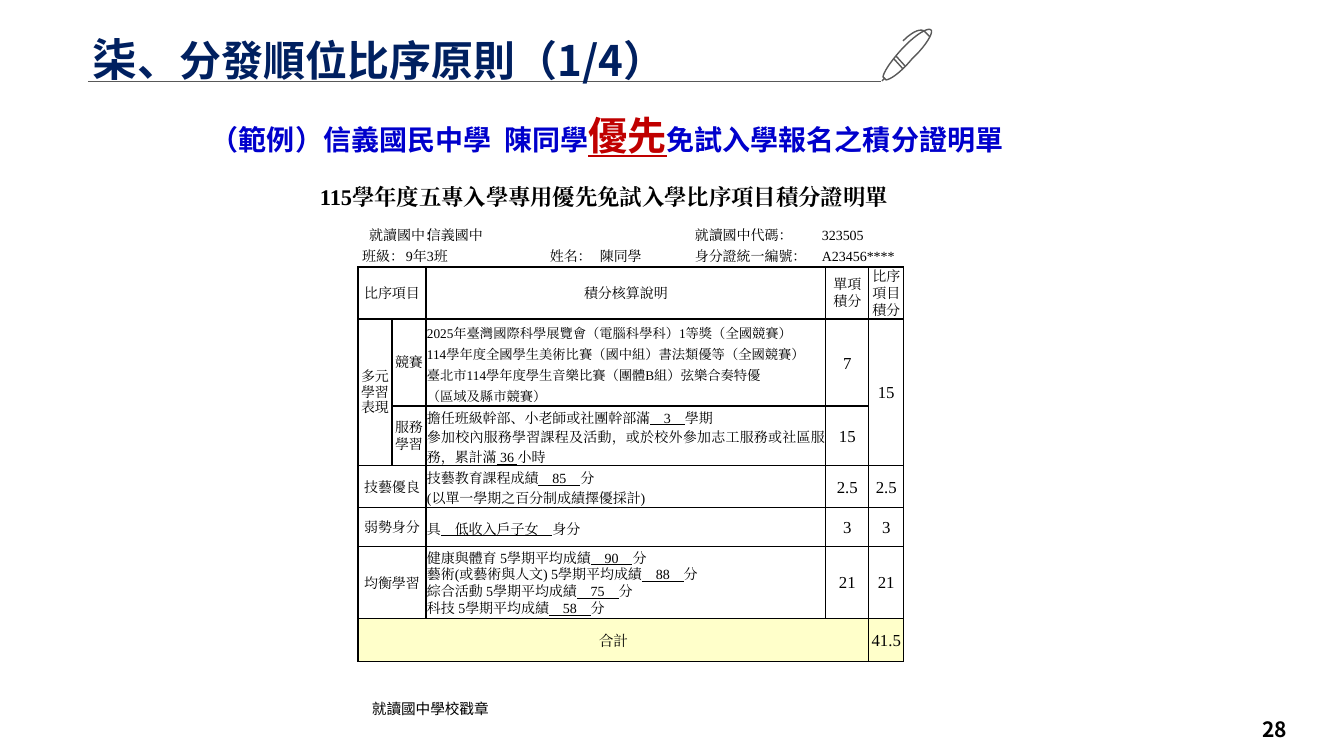
"""Build the slide on ranking rules with a sample score sheet."""
import pptx
import pptx.util
import pptx.dml.color
import pptx.enum.shapes
import pptx.enum.text
import pptx.oxml.ns
from lxml import etree

THEME = {
    "sans": "Noto Sans CJK SC", "serif": "Times New Roman",
    "navy": "002060", "blue": "0000CC", "red": "C00000",
    "black": "000000", "grey": "595959", "cream": "FFFFCA",
    "first": 32, "title": 30, "stress": 28, "lead": 20, "head": 16,
    "page": 15, "score": 12, "note": 10.5, "body": 10, "prize": 9.5,
}

BOXES = [
    {"at": (201, 106, 822, 57), "font": "sans", "size": "lead", "color": "blue", "bold": True,
     "runs": [("（範例）信義國民中學  陳同學", {}),
              ("優先", {"size": "stress", "color": "red", "under": True}),
              ("免試入學報名之積分證明單", {})]},
    {"at": (310, 178, 596, 37), "font": "serif", "size": "head", "color": "black", "bold": True,
     "wrap": False, "runs": [("115學年度五專入學專用優先免試入學比序項目積分證明單", {})]},
    {"at": (362, 695, 139, 28), "font": "sans", "size": "note", "color": "black",
     "wrap": False, "runs": [("就讀國中學校戳章", {})]},
    {"at": (83, 33, 795, 48), "font": "sans", "size": "title", "color": "navy", "bold": True,
     "space": 0.9, "runs": [("柒", {"size": "first"}), ("、分發順位比序原則（1/4）", {})]},
    {"at": (1056, 715, 241, 29), "font": "sans", "size": "page", "color": "black", "bold": True,
     "align": "r", "middle": True, "runs": [("28", {})]},
]

SPOT = (358, 226)
COLS = [34, 13, 21, 114, 59, 95, 127, 5, 43, 35]
ROWS = [19, 22, 52, 87, 60, 42, 39, 72, 43]

# row, column, row span, column span, align, size, leading, lines
CELLS = [
    (0, 0, 1, 3, "r", "body", 12, ["就讀國中："]),
    (0, 3, 1, 3, "l", "body", 12, ["信義國中"]),
    (0, 6, 1, 1, "j", "body", 12, ["就讀國中代碼："]),
    (0, 7, 1, 3, "l", "body", 12, ["323505"]),
    (1, 0, 1, 2, "r", "body", 12, ["班級："]),
    (1, 2, 1, 2, "l", "body", 12, ["9年3班"]),
    (1, 4, 1, 1, "j", "body", 12, ["姓名： "]),
    (1, 5, 1, 1, "j", "body", 12, ["陳同學"]),
    (1, 6, 1, 1, "j", "body", 12, ["身分證統一編號："]),
    (1, 7, 1, 3, "l", "body", 12, ["A23456****"]),
    (2, 0, 1, 3, "c", "body", 12, ["比序項目"]),
    (2, 3, 1, 5, "c", "body", 12, ["積分核算說明"]),
    (2, 8, 1, 1, "c", "body", 12, ["單項", "積分"]),
    (2, 9, 1, 1, "c", "body", 12, ["比序項目積分"]),
    (3, 0, 2, 1, "c", "body", None, ["多元學習表現"]),
    (3, 1, 1, 2, "c", "body", 12, ["競賽"]),
    (3, 3, 1, 5, "j", "prize", 15, [
        "2025年臺灣國際科學展覽會（電腦科學科）1等獎（全國競賽）",
        "114學年度全國學生美術比賽（國中組）書法類優等（全國競賽）",
        "臺北市114學年度學生音樂比賽（團體B組）弦樂合奏特優",
        "（區域及縣市競賽）"]),
    (3, 8, 1, 1, "c", "score", 15, ["7"]),
    (3, 9, 2, 1, "c", "score", 14, ["15"]),
    (4, 1, 1, 2, "c", "body", 12, ["服務", "學習"]),
    (4, 3, 1, 5, "j", "body", 14, [
        "擔任班級幹部、小老師或社團幹部滿|　3　|學期",
        "參加校內服務學習課程及活動，或於校外參加志工服務或社區服務，累計滿| 36 |小時"]),
    (4, 8, 1, 1, "c", "score", 14, ["15"]),
    (5, 0, 1, 3, "c", "body", 12, ["技藝優良"]),
    (5, 3, 1, 5, "j", "body", 14, ["技藝教育課程成績|　85　|分", "(以單一學期之百分制成績擇優採計)"]),
    (5, 8, 1, 1, "c", "score", 14, ["2.5"]),
    (5, 9, 1, 1, "c", "score", 14, ["2.5"]),
    (6, 0, 1, 3, "c", "body", 12, ["弱勢身分"]),
    (6, 3, 1, 5, "j", "body", 14, ["具|　低收入戶子女　|身分"]),
    (6, 8, 1, 1, "c", "score", 14, ["3"]),
    (6, 9, 1, 1, "c", "score", 14, ["3"]),
    (7, 0, 1, 3, "c", "body", 12, ["均衡學習"]),
    (7, 3, 1, 5, "l", "body", 12, [
        "健康與體育 5學期平均成績|　90　|分",
        "藝術(或藝術與人文) 5學期平均成績|　88　|分",
        "綜合活動 5學期平均成績|　75　|分",
        "科技 5學期平均成績|　58　|分"]),
    (7, 8, 1, 1, "c", "score", 14, ["21"]),
    (7, 9, 1, 1, "c", "score", 14, ["21"]),
    (8, 0, 1, 9, "c", "note", 14, ["合計"]),
    (8, 9, 1, 1, "c", "score", 14, ["41.5"]),
]

RULE = (88, 81, 881, 81)
PEN = [
    ((903, 69), [[(894, 59)]], False),
    ((896, 56), [[(905, 66)]], False),
    ((931, 30), [[(928, 27), (915, 35), (902, 49)], [(892, 60), (884, 71), (883, 77)],
                 [(886, 80)], [(892, 79), (902, 71), (912, 59)],
                 [(926, 46), (934, 32), (931, 30)]], True),
    ((885, 78), [[(882, 81)]], False),
    ((930, 37), [[(924, 31)], [(924, 31), (918, 26), (903, 41)]], False),
]

ALIGN = {"l": pptx.enum.text.PP_ALIGN.LEFT, "r": pptx.enum.text.PP_ALIGN.RIGHT,
         "c": pptx.enum.text.PP_ALIGN.CENTER, "j": pptx.enum.text.PP_ALIGN.JUSTIFY}
STEPS = 10
qn = pptx.oxml.ns.qn


def px(n):
    return round(n * 914400 / 100.8)


def rgb(name):
    return pptx.dml.color.RGBColor.from_string(THEME[name])


def style(font, size=None, color=None, under=None):
    if size:
        font.size = pptx.util.Pt(THEME[size])
    if color:
        font.color.rgb = rgb(color)
    if under:
        font.underline = True


def write(para, runs, font, size, color, bold=False, align="l", space=None):
    para.alignment = ALIGN[align]
    para.line_spacing = space
    style(para.font, size, color)
    para.font.bold = bold
    para.font.name = THEME[font]
    base = para._p.find(".//" + qn("a:defRPr"))
    etree.SubElement(base, qn("a:ea")).set("typeface", THEME[font])
    for text, extra in runs:
        run = para.add_run()
        run.text = text
        style(run.font, **extra)


def add_box(slide, at, runs, wrap=True, middle=False, **look):
    frame = slide.shapes.add_textbox(*map(px, at)).text_frame
    frame.word_wrap = wrap
    if middle:
        frame.vertical_anchor = pptx.enum.text.MSO_ANCHOR.MIDDLE
    write(frame.paragraphs[0], runs, **look)


def edge(cell, sides):
    props = cell._tc.get_or_add_tcPr()
    for side in "LRTB":
        line = etree.SubElement(props, qn("a:ln" + side), w="12700")
        if side in sides:
            fill = etree.SubElement(line, qn("a:solidFill"))
            etree.SubElement(fill, qn("a:srgbClr"), val=THEME["black"])
        else:
            etree.SubElement(line, qn("a:noFill"))


def add_sheet(slide):
    table = slide.shapes.add_table(len(ROWS), len(COLS), *map(px, (*SPOT, sum(COLS), sum(ROWS)))).table
    table.first_row = table.horz_banding = False
    for col, wide in zip(table.columns, COLS):
        col.width = px(wide)
    for r, (row, high) in enumerate(zip(table.rows, ROWS)):
        row.height = px(high)
        for cell in row.cells:
            edge(cell, {0: "", 1: "B"}.get(r, "LRTB"))
            cell.margin_left = cell.margin_right = px(1)
            cell.margin_top = cell.margin_bottom = 0
            cell.vertical_anchor = pptx.enum.text.MSO_ANCHOR.MIDDLE
            if r == len(ROWS) - 1:
                cell.fill.solid()
                cell.fill.fore_color.rgb = rgb("cream")
            else:
                cell.fill.background()
    for r, c, down, over, align, size, lead, lines in CELLS:
        cell = table.cell(r, c)
        if down * over > 1:
            cell.merge(table.cell(r + down - 1, c + over - 1))
        if lines == ["姓名： "]:
            cell.margin_left = px(10)
        for i, line in enumerate(lines):
            frame = cell.text_frame
            para = frame.add_paragraph() if i else frame.paragraphs[0]
            runs = [(part, {"under": k % 2 == 1}) for k, part in enumerate(line.split("|"))]
            write(para, runs, "serif", size, "black", align=align,
                  space=pptx.util.Pt(lead) if lead else None)


def trace(start, curves):
    spots = []
    for curve in curves:
        if len(curve) == 1:
            spots += curve
        else:
            for t in (n / STEPS for n in range(1, STEPS + 1)):
                mix = ((1 - t) ** 3, 3 * t * (1 - t) ** 2, 3 * t * t * (1 - t), t ** 3)
                spots.append(tuple(sum(m * p[k] for m, p in zip(mix, [start, *curve])) for k in (0, 1)))
        start = curve[-1]
    return [(px(x), px(y)) for x, y in spots]


def add_pen(slide):
    rule = slide.shapes.add_connector(pptx.enum.shapes.MSO_CONNECTOR.STRAIGHT, *map(px, RULE))
    etree.SubElement(rule._element.spPr, qn("a:effectLst"))
    path = slide.shapes.build_freeform(*map(px, PEN[0][0]))
    for i, (start, curves, close) in enumerate(PEN):
        if i:
            path.move_to(*map(px, start))
        path.add_line_segments(trace(start, curves), close=close)
    pen = path.convert_to_shape()
    pen.shadow.inherit = False
    pen.fill.background()
    for shape, width in ((rule, 0.5), (pen, 1)):
        shape.line.color.rgb = rgb("grey")
        shape.line.width = pptx.util.Pt(width)


def main():
    deck = pptx.Presentation()
    deck.slide_width, deck.slide_height = px(1344), px(756)
    slide = deck.slides.add_slide(deck.slide_layouts[6])
    add_sheet(slide)
    add_pen(slide)
    for box in BOXES:
        add_box(slide, **box)
    deck.save("out.pptx")


if __name__ == "__main__":
    main()
